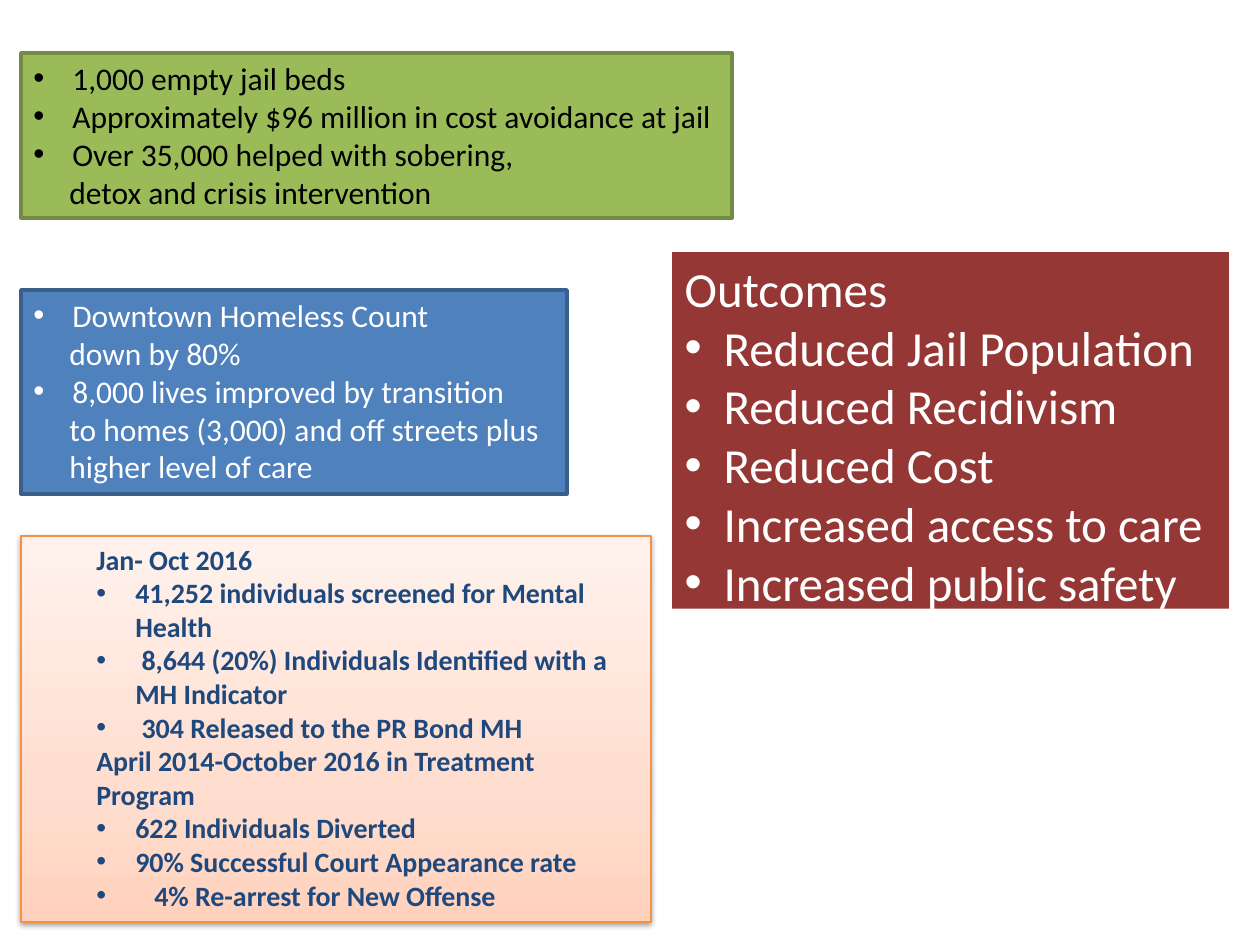
from copy import deepcopy
from dataclasses import dataclass

from lxml import etree
from pptx import Presentation
from pptx.dml.color import RGBColor
from pptx.enum.shapes import MSO_SHAPE
from pptx.enum.text import MSO_ANCHOR, MSO_AUTO_SIZE, PP_ALIGN
from pptx.oxml.ns import qn
from pptx.util import Emu, Pt

RECTANGLE = MSO_SHAPE.RECTANGLE
TOP = MSO_ANCHOR.TOP
GROW = MSO_AUTO_SIZE.SHAPE_TO_FIT_TEXT
LEFT = PP_ALIGN.LEFT
EMU_PER_PX = 914400 / 126
HANGING = 39
CONTINUED = 36
INSET = 63


@dataclass(frozen=True)
class Theme:
    """Colours, font and type sizes of the slide."""
    font: str = "Calibri"
    white: str = "FFFFFF"
    black: str = "000000"
    navy: str = "1F497D"
    red: str = "953735"
    blue: str = "4F81BD"
    blue_edge: str = "3A5F8C"
    green: str = "9BBB59"
    green_edge: str = "738A42"
    orange_edge: str = "F69240"
    peach: tuple = ((0, "FFD2BD"), (0.35, "FFDED0"), (1, "FFF2ED"))
    outcome_size: int = 28
    fact_size: int = 18
    detail_size: int = 16


@dataclass(frozen=True)
class Row:
    """One paragraph with its left margin and bullet distance in px."""
    text: str
    margin: int = 0
    hanging: int = 0


def px(length):
    """Convert px to EMU."""
    return Emu(round(length * EMU_PER_PX))


def bullet(text, inset=0, gap=0):
    """Return a bulleted row."""
    return Row(text, inset + HANGING + gap, HANGING + gap)


class SlideBuilder:
    """Holds the theme and the current slide."""

    def __init__(self, presentation, theme):
        """Add a slide with a body placeholder only."""
        self.theme = theme
        self.slide = presentation.slides.add_slide(presentation.slide_layouts[1])
        title = self.slide.shapes.title._element
        title.getparent().remove(title)

    def body(self, box, fill):
        """Place and fill the body placeholder."""
        shape = self.slide.placeholders[1]
        shape.left, shape.top, shape.width, shape.height = map(px, box)
        self.solid(shape, fill)
        return shape

    def panel(self, box, edge, edge_width):
        """Add an outlined rectangle."""
        shape = self.slide.shapes.add_shape(RECTANGLE, *map(px, box))
        shape.shadow.inherit = False
        shape.line.color.rgb = RGBColor.from_string(edge)
        shape.line.width = Pt(edge_width)
        return shape

    def solid(self, shape, color):
        """Fill a shape with one colour."""
        shape.fill.solid()
        shape.fill.fore_color.rgb = RGBColor.from_string(color)

    def gradient(self, shape, stops):
        """Fill a shape with colours running upwards."""
        shape.fill.gradient()
        shape.fill.gradient_angle = 90
        stop_list = shape._element.spPr.find(qn("a:gradFill")).find(qn("a:gsLst"))
        while len(stop_list) < len(stops):
            stop_list.append(deepcopy(stop_list[0]))
        for stop, (position, color) in zip(shape.fill.gradient_stops, stops):
            stop.position = position
            stop.color.rgb = RGBColor.from_string(color)

    def shadow(self, shape, color, opacity, blur, distance):
        """Give a shape a soft shadow below it."""
        effects = shape._element.spPr.find(qn("a:effectLst"))
        outer = etree.SubElement(effects, qn("a:outerShdw"), blurRad=str(Pt(blur)),
                                 dist=str(Pt(distance)), dir="5400000", rotWithShape="0")
        tint = etree.SubElement(outer, qn("a:srgbClr"), val=color)
        etree.SubElement(tint, qn("a:alpha"), val=str(opacity * 1000))

    def text(self, shape, rows, size, color, bold=False):
        """Write the rows into a shape."""
        frame = shape.text_frame
        frame.word_wrap = True
        frame.auto_size = GROW
        frame.vertical_anchor = TOP
        for index, row in enumerate(rows):
            paragraph = frame.add_paragraph() if index else frame.paragraphs[0]
            paragraph.alignment = LEFT
            paragraph.space_before = Pt(0)
            self.indent(paragraph, row)
            run = paragraph.add_run()
            run.text = row.text
            run.font.name = self.theme.font
            run.font.size = Pt(size)
            run.font.bold = bold
            run.font.color.rgb = RGBColor.from_string(color)

    def indent(self, paragraph, row):
        """Set the margin and bullet of a paragraph."""
        properties = paragraph._p.get_or_add_pPr()
        properties.set("marL", str(px(row.margin)))
        properties.set("indent", str(px(-row.hanging)))
        if row.hanging:
            etree.SubElement(properties, qn("a:buFont"), typeface="Arial")
            etree.SubElement(properties, qn("a:buChar"), char="•")
        else:
            etree.SubElement(properties, qn("a:buNone"))


def main():
    """Build the outcomes slide."""
    presentation = Presentation()
    presentation.slide_width, presentation.slide_height = px(1260), px(945)
    theme = Theme()
    builder = SlideBuilder(presentation, theme)

    outcomes = builder.body((672, 252, 557, 369), theme.red)
    goals = ("Reduced Jail Population", "Reduced Recidivism", "Reduced Cost",
             "Increased access to care", "Increased public safety")
    builder.text(outcomes, [Row("Outcomes"), *map(bullet, goals)],
                 theme.outcome_size, theme.white)

    homeless = builder.panel((21, 290, 546, 204), theme.blue_edge, 2)
    builder.solid(homeless, theme.blue)
    builder.text(homeless, [
        bullet("Downtown Homeless Count"),
        Row("down by 80%", CONTINUED),
        bullet("8,000 lives improved by transition"),
        Row("to homes (3,000) and off streets plus", CONTINUED),
        Row("higher level of care", CONTINUED),
    ], theme.fact_size, theme.white)

    jail = builder.panel((21, 53, 711, 165), theme.green_edge, 2)
    builder.solid(jail, theme.green)
    builder.text(jail, [
        bullet("1,000 empty jail beds"),
        bullet("Approximately $96 million in cost avoidance at jail"),
        bullet("Over 35,000 helped with sobering,"),
        Row("detox and crisis intervention", CONTINUED),
    ], theme.fact_size, theme.black)

    screening = builder.panel((21, 536, 630, 386), theme.orange_edge, 0.75)
    builder.gradient(screening, theme.peach)
    builder.shadow(screening, theme.black, 38, 3.1, 1.6)
    builder.text(screening, [
        Row("Jan- Oct 2016", INSET),
        bullet("41,252 individuals screened for Mental Health", INSET),
        bullet(" 8,644 (20%) Individuals Identified with a MH Indicator", INSET),
        bullet(" 304 Released to the PR Bond MH", INSET),
        Row("April 2014-October 2016 in Treatment Program", INSET),
        bullet("622 Individuals Diverted", INSET),
        bullet("90% Successful Court Appearance rate", INSET),
        bullet("4% Re-arrest for New Offense", INSET, 19),
    ], theme.detail_size, theme.navy, bold=True)

    presentation.save("out.pptx")


if __name__ == "__main__":
    main()
